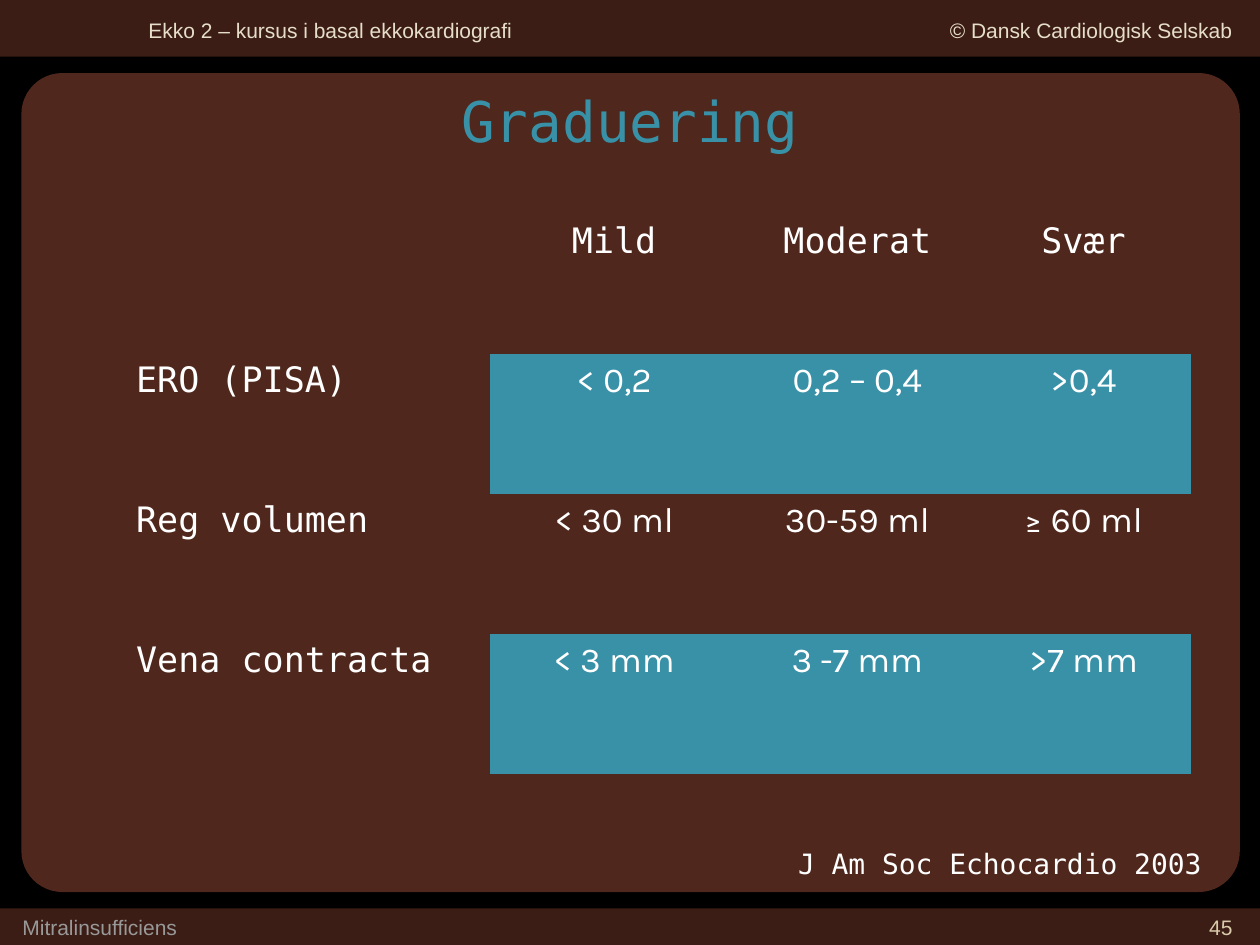
from pptx import Presentation
from pptx.dml.color import RGBColor
from pptx.enum.shapes import MSO_SHAPE
from pptx.enum.text import MSO_ANCHOR, MSO_AUTO_SIZE, PP_ALIGN
from pptx.util import Inches, Pt

MONO, SANS, BODY = "DejaVu Sans Mono", "Arial", "Karla"
BAR, PANEL, TEAL = "3B1D15", "4F271C", "3891A7"
WHITE, CREAM, SAND, GREY = "FFFFFF", "E7DEC9", "DACCAB", "999999"
LEFT, MID, RIGHT = PP_ALIGN.LEFT, PP_ALIGN.CENTER, PP_ALIGN.RIGHT
PLAIN = "{2D5ABB26-0587-4C30-8999-92F81FD0307C}"  # no style, no grid


def color(code):
    return RGBColor.from_string(code)


class Deck:
    def __init__(self, width, height, back):
        self.prs = Presentation()
        self.prs.slide_width, self.prs.slide_height = Inches(width), Inches(height)
        self.slide = self.prs.slides.add_slide(self.prs.slide_layouts[5])
        self.shapes = self.slide.shapes
        fill = self.slide.background.fill
        fill.solid()
        fill.fore_color.rgb = color(back)

    def style(self, frame, text, size, font, code, align):
        frame.text = text
        para = frame.paragraphs[0]
        para.alignment = align
        for run in para.runs:
            run.font.size, run.font.name = Pt(size), font
            run.font.color.rgb = color(code)

    def block(self, kind, box, code):
        shape = self.shapes.add_shape(kind, *map(Inches, box))
        shape.shadow.inherit = False
        shape.fill.solid()
        shape.fill.fore_color.rgb = color(code)
        shape.line.fill.background()
        return shape

    def title(self, box, text, size, font, code):
        shape = self.shapes.title
        shape.left, shape.top, shape.width, shape.height = map(Inches, box)
        frame = shape.text_frame
        frame.auto_size = MSO_AUTO_SIZE.NONE
        frame.vertical_anchor = MSO_ANCHOR.MIDDLE
        self.style(frame, text, size, font, code, MID)
        # Bring the title in front of the panel
        self.shapes[-1].element.addnext(shape.element)

    def label(self, box, text, size, font, code, align=LEFT):
        frame = self.shapes.add_textbox(*map(Inches, box)).text_frame
        frame.word_wrap = True
        self.style(frame, text, size, font, code, align)

    def table(self, box, widths, rows):
        shape = self.shapes.add_table(len(rows), len(widths), *map(Inches, box))
        shape.element.xpath(".//a:tableStyleId")[0].text = PLAIN
        grid = shape.table
        grid.first_row = grid.horz_banding = False
        for col, width in zip(grid.columns, widths):
            col.width = Inches(width)
        for r, row in enumerate(rows):
            for c, text in enumerate(row):
                cell = grid.cell(r, c)
                if r % 2 and c:
                    cell.fill.solid()
                    cell.fill.fore_color.rgb = color(TEAL)
                else:
                    cell.fill.background()
                font = BODY if r and c else MONO
                self.style(cell.text_frame, text, 20, font, WHITE, MID if c else LEFT)


def main():
    deck = Deck(10, 7.5, "000000")

    # Bars and panel
    deck.block(MSO_SHAPE.RECTANGLE, (0, 7.21, 10, 0.29), BAR)
    deck.block(MSO_SHAPE.RECTANGLE, (0, 0, 10, 0.45), BAR)
    panel = deck.block(MSO_SHAPE.ROUNDED_RECTANGLE, (0.17, 0.58, 9.67, 6.5), PANEL)
    panel.adjustments[0] = 0.05

    # Header
    deck.label((1.08, 0.09, 3.75, 0.3), "Ekko 2 – kursus i basal ekkokardiografi",
               12, SANS, CREAM)
    deck.label((6.89, 0.09, 2.99, 0.3), "© Dansk Cardiologisk Selskab",
               12, SANS, CREAM, RIGHT)

    # Title and source
    deck.title((0.25, 0.33, 9.5, 1.25), "Graduering", 32, MONO, TEAL)
    deck.label((5.87, 6.67, 4.13, 0.37), "J Am Soc Echocardio 2003",
               16, MONO, WHITE, MID)

    # Grading table
    deck.table((0.98, 1.7, 8.48, 4.44), (2.91, 1.97, 1.89, 1.7), [
        ("", "Mild", "Moderat", "Svær"),
        ("ERO (PISA)", "< 0,2", "0,2 – 0,4", ">0,4"),
        ("Reg volumen", "< 30 ml", "30-59 ml", "≥ 60 ml"),
        ("Vena contracta", "< 3 mm", "3 -7 mm", ">7 mm"),
    ])

    # Footer
    deck.label((7.55, 7.21, 2.33, 0.25), "45", 12, SANS, SAND, RIGHT)
    deck.label((0.08, 7.21, 3.17, 0.25), "Mitralinsufficiens", 12, SANS, GREY)

    deck.prs.save("out.pptx")


if __name__ == "__main__":
    main()
